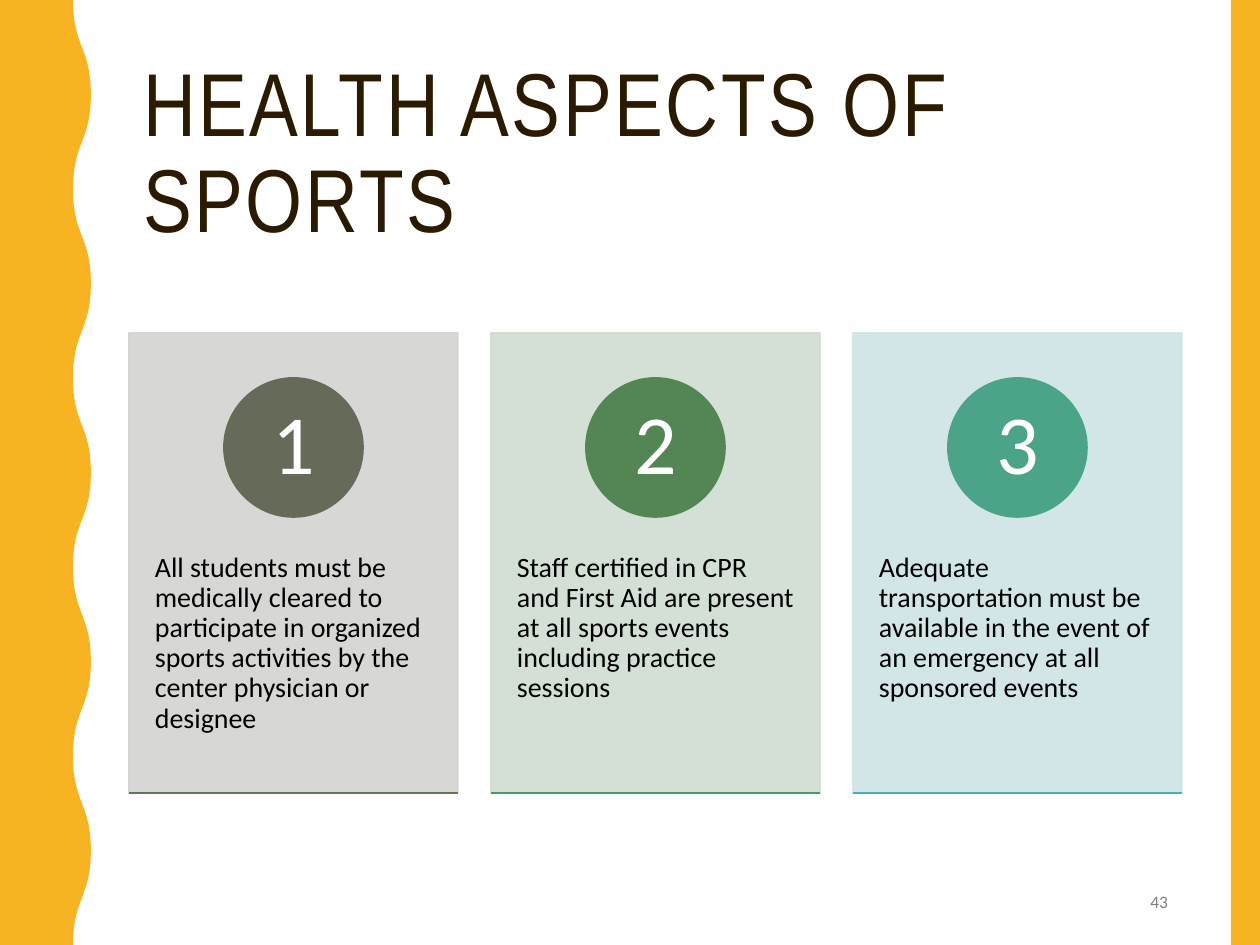
from dataclasses import dataclass

from lxml import etree
from pptx import Presentation
from pptx.dml.color import RGBColor
from pptx.enum.shapes import MSO_CONNECTOR, MSO_SHAPE
from pptx.enum.text import MSO_ANCHOR, PP_ALIGN
from pptx.oxml.ns import qn
from pptx.util import Emu, Pt

RECT, OVAL = MSO_SHAPE.RECTANGLE, MSO_SHAPE.OVAL
LINE = MSO_CONNECTOR.STRAIGHT
TOP, MIDDLE = MSO_ANCHOR.TOP, MSO_ANCHOR.MIDDLE
LEFT, CENTER, RIGHT = PP_ALIGN.LEFT, PP_ALIGN.CENTER, PP_ALIGN.RIGHT

SCALE = 914400 / 126
WIDE, HIGH = 1260, 945


@dataclass(frozen=True)
class Theme:
    """Colours, fonts and type sizes of the slide."""
    gold: str = "F8B323"
    title: str = "2A1A00"
    body: str = "000000"
    badge: str = "FFFFFF"
    folio: str = "808080"
    head_font: str = "Arial Narrow"
    body_font: str = "Calibri"
    title_size: int = 51
    badge_size: int = 48
    body_size: int = 16
    folio_size: int = 10


THEME = Theme()

CARDS = [
    ("All students must be medically cleared to participate in organized "
     "sports activities by the center physician or designee",
     "D3D4D1", "656A59", "637757"),
    ("Staff certified in CPR and First Aid are present at all sports events "
     "including practice sessions",
     "D0DDD2", "548654", "509567"),
    ("Adequate transportation must be available in the event of an emergency "
     "at all sponsored events",
     "CFE4E5", "4BA488", "46B2B5"),
]


def px(value):
    """Turn pixels into EMU."""
    return Emu(round(value * SCALE))


def paint(shape, color, alpha=None, edge=True):
    """Give a shape one colour for fill and outline."""
    shape.shadow.inherit = False
    shape.fill.solid()
    shape.fill.fore_color.rgb = RGBColor.from_string(color)
    if edge:
        shape.line.color.rgb = RGBColor.from_string(color)
        shape.line.width = Pt(1)
    else:
        shape.line.fill.background()
    if alpha:
        for tone in shape._element.spPr.iter(qn("a:srgbClr")):
            etree.SubElement(tone, qn("a:alpha")).set("val", str(alpha * 1000))


def add_block(slide, kind, box, color, alpha=None, edge=True):
    """Add a filled preset shape."""
    shape = slide.shapes.add_shape(kind, *map(px, box))
    paint(shape, color, alpha, edge)
    return shape


def write(shape, text, size, color, font=THEME.body_font, align=LEFT,
          anchor=MIDDLE, inset=(13, 6), lead=None, track=None):
    """Set one styled paragraph in a shape."""
    frame = shape.text_frame
    frame.word_wrap = True
    frame.vertical_anchor = anchor
    frame.margin_left = frame.margin_right = px(inset[0])
    frame.margin_top = frame.margin_bottom = px(inset[1])
    para = frame.paragraphs[0]
    run = para.add_run()
    run.text = text
    para.alignment = align
    para.line_spacing = lead
    para.font.name = font
    para.font.size = Pt(size)
    para.font.color.rgb = RGBColor.from_string(color)
    if track:
        run._r.get_or_add_rPr().set("spc", str(track))


def add_label(slide, box, text, size, color, **style):
    """Add a text box."""
    write(slide.shapes.add_textbox(*map(px, box)), text, size, color, **style)


def add_rule(slide, left, top, width, color):
    """Add a thin level line."""
    rule = slide.shapes.add_connector(
        LINE, px(left), px(top), px(left + width), px(top))
    rule.line.color.rgb = RGBColor.from_string(color)
    rule.line.width = Pt(1)
    etree.SubElement(rule._element.spPr, qn("a:effectLst"))


def add_wave(slide, inner=73, outer=91, halves=10, steps=14):
    """Add the left band with its wavy edge."""
    points = [(px(inner), 0)]
    for half in range(halves):
        start, end = (outer, inner) if half % 2 else (inner, outer)
        for step in range(1, steps + 1):
            t = step / steps
            ease = 3 * t ** 2 - 2 * t ** 3
            drop = 1.5 * t * (1 - t) + t ** 3
            points.append((px(start + (end - start) * ease),
                           px((half + drop) * HIGH / halves)))
    points.append((0, px(HIGH)))
    band = slide.shapes.build_freeform(0, 0)
    band.add_line_segments(points, close=True)
    paint(band.convert_to_shape(), THEME.gold, edge=False)


def add_card(slide, index, text, panel, badge, rule):
    """Add a numbered card with its text and base line."""
    left, top, width, height, disc = 129 + 362 * index, 333, 329, 460, 139
    add_block(slide, RECT, (left, top, width, height), panel, alpha=90)
    add_label(slide, (left, 508, width, 276), text, THEME.body_size,
              THEME.body, anchor=TOP, inset=(26, 45), lead=0.9)
    oval = add_block(
        slide, OVAL, (left + (width - disc) // 2, 378, disc, disc), badge)
    write(oval, str(index + 1), THEME.badge_size, THEME.badge,
          align=CENTER, inset=(11, 1), lead=0.9)
    add_rule(slide, left, top + height, width, rule)


def main():
    """Build and save the slide."""
    deck = Presentation()
    deck.slide_width, deck.slide_height = px(WIDE), px(HIGH)
    slide = deck.slides.add_slide(deck.slide_layouts[6])
    add_label(slide, (130, 53, 1052, 205), "HEALTH ASPECTS OF SPORTS",
              THEME.title_size, THEME.title, font=THEME.head_font,
              lead=0.9, track=150)
    add_wave(slide)
    add_label(slide, (890, 878, 291, 48), "43", THEME.folio_size,
              THEME.folio, align=RIGHT)
    add_block(slide, RECT, (1231, 0, 29, HIGH), THEME.gold, edge=False)
    for index, card in enumerate(CARDS):
        add_card(slide, index, *card)
    deck.save("out.pptx")


if __name__ == "__main__":
    main()
